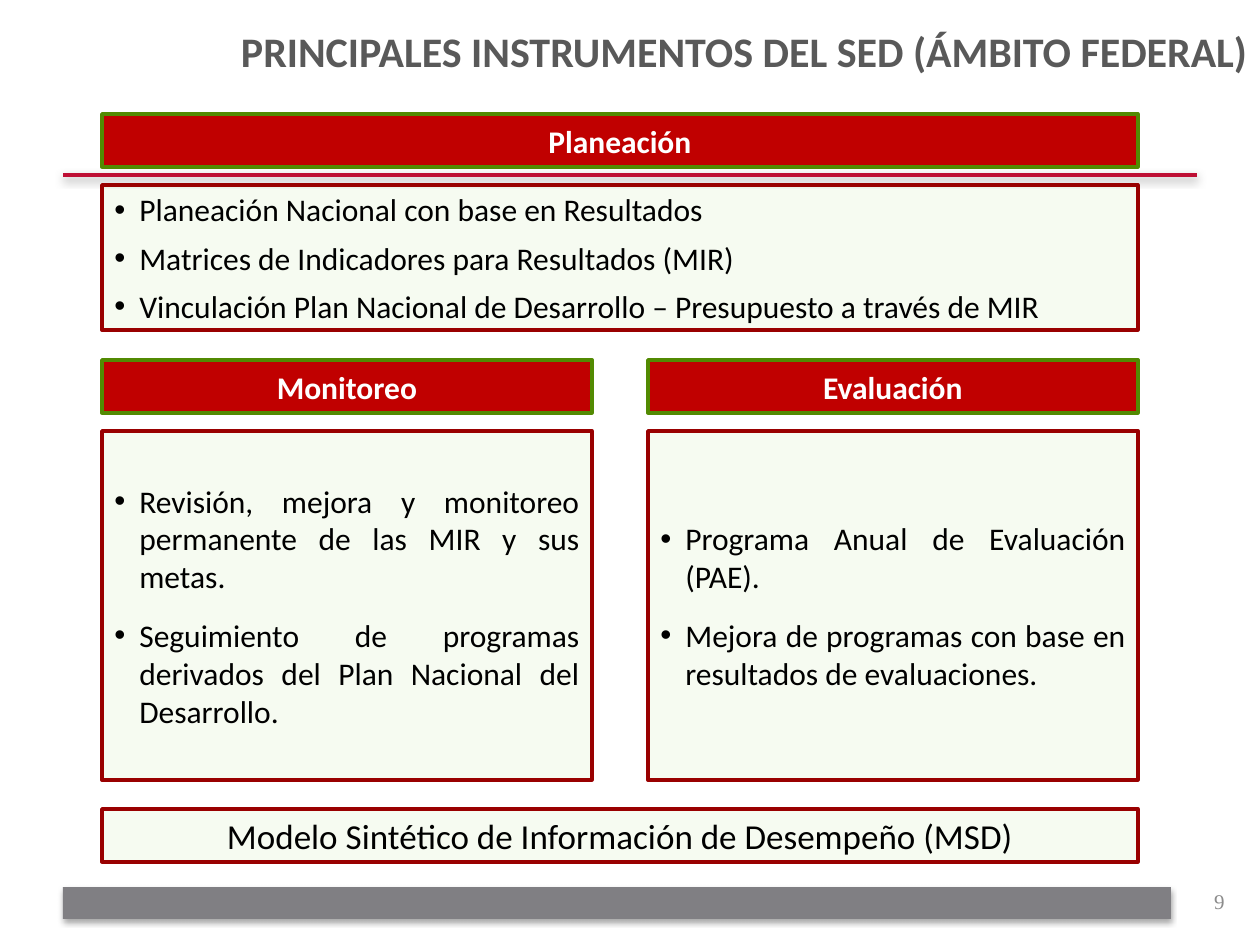
from lxml.etree import SubElement
from pptx import Presentation
from pptx.dml.color import RGBColor
from pptx.enum.shapes import MSO_CONNECTOR as CONN, MSO_SHAPE as SHAPE
from pptx.enum.text import MSO_ANCHOR as ANCHOR, PP_ALIGN as ALIGN
from pptx.oxml.ns import qn
from pptx.util import Pt

EMU = 914400 / 126
WHITE = RGBColor(0xFF, 0xFF, 0xFF)
BLACK = RGBColor(0x00, 0x00, 0x00)
DARK_GRAY = RGBColor(0x59, 0x59, 0x59)
BAR_GRAY = RGBColor(0x80, 0x7F, 0x83)
NUMBER_GRAY = RGBColor(0x8C, 0x8C, 0x8C)
RED = RGBColor(0xC0, 0x00, 0x00)
RULE_RED = RGBColor(0xBE, 0x0F, 0x34)
DARK_RED = RGBColor(0x99, 0x00, 0x00)
GREEN = RGBColor(0x52, 0x8A, 0x02)
LIME = RGBColor(0x92, 0xD0, 0x50)

TITLE = "PRINCIPALES INSTRUMENTOS DEL SED (ÁMBITO FEDERAL)"
MODEL = "Modelo Sintético de Información de Desempeño (MSD)"
PAGE = "9"

LEFT, FULL_W, HALF_W = 102, 1036, 490
RIGHT = LEFT + FULL_W - HALF_W
HEAD_H, HEAD_STEP = 53, 71

# heading, left, top, width, body height, space after, bullets
SECTIONS = [
    ("Monitoreo", LEFT, 360, HALF_W, 349, 12, [
        "Revisión, mejora y monitoreo permanente de las MIR y sus metas.",
        "Seguimiento de programas derivados del Plan Nacional del Desarrollo.",
    ]),
    ("Evaluación", RIGHT, 360, HALF_W, 349, 12, [
        "Programa Anual de Evaluación (PAE).",
        "Mejora de programas con base en resultados de evaluaciones.",
    ]),
    ("Planeación", LEFT, 114, FULL_W, 145, 6, [
        "Planeación Nacional con base en Resultados",
        "Matrices de Indicadores para Resultados (MIR)",
        "Vinculación Plan Nacional de Desarrollo – Presupuesto a través de MIR",
    ]),
]

HEADING = {"size": Pt(18), "bold": True, "name": "Calibri"}
BODY = {"size": Pt(18), "name": "Calibri"}
MODEL_FONT = {"size": Pt(20), "name": "Calibri"}
TITLE_FONT = {"size": Pt(24), "bold": True, "name": "Calibri"}
PAGE_FONT = {"size": Pt(12), "name": "Times New Roman"}


def px(*values):
    """Turn px lengths into EMU."""
    return [round(v * EMU) for v in values]


def add_shadow(s, alpha, blur, dist):
    """Give a shape or connector a black shadow that falls downwards."""
    sp_pr = s._element.spPr
    effects = sp_pr.find(qn("a:effectLst"))
    if effects is None:
        effects = SubElement(sp_pr, qn("a:effectLst"))
    shadow = SubElement(effects, qn("a:outerShdw"), blurRad=str(Pt(blur)),
                        dist=str(Pt(dist)), dir="5400000", rotWithShape="0")
    color = SubElement(shadow, qn("a:srgbClr"), val="000000")
    SubElement(color, qn("a:alpha"), val=str(alpha * 1000))


def add_box(box, fill, line=None, alpha=None):
    """Add a flat rectangle."""
    s = slide.shapes.add_shape(SHAPE.RECTANGLE, *px(*box))
    s.shadow.inherit = False
    s.fill.solid()
    s.fill.fore_color.rgb = fill
    if alpha:
        color = s._element.spPr.find(qn("a:solidFill"))[0]
        SubElement(color, qn("a:alpha"), val=str(alpha * 1000))
    if line is None:
        s.line.fill.background()
    else:
        s.line.color.rgb = line
        s.line.width = Pt(2)
    return s


def write(s, lines, font, color, align, space=None):
    """Write paragraphs, bulleted when a space after is given."""
    tf = s.text_frame
    tf.word_wrap = True
    tf.vertical_anchor = ANCHOR.MIDDLE
    for i, text in enumerate(lines):
        p = tf.add_paragraph() if i else tf.paragraphs[0]
        p.alignment = align
        if space:
            p.space_after = Pt(space)
            p_pr = p._p.get_or_add_pPr()
            p_pr.set("marL", str(px(25)[0]))
            p_pr.set("indent", str(px(-25)[0]))
            SubElement(p_pr, qn("a:buFont"), typeface="Arial")
            SubElement(p_pr, qn("a:buChar"), char="•")
        r = p.add_run()
        r.text = text
        for key, value in font.items():
            setattr(r.font, key, value)
        r.font.color.rgb = color


prs = Presentation()
prs.slide_width, prs.slide_height = px(1260, 945)
slide = prs.slides.add_slide(prs.slide_layouts[6])

add_shadow(add_box((63, 887, 1108, 32), BAR_GRAY), 35, 3.1, 1.8)
rule = slide.shapes.add_connector(CONN.STRAIGHT, *px(63, 175, 1197, 175))
rule.line.color.rgb = RULE_RED
rule.line.width = Pt(2)
add_shadow(rule, 38, 5, 1.6)

for box, text, font, color in [
    ((944, 876, 293, 50), PAGE, PAGE_FONT, NUMBER_GRAY),
    ((0, 4, 1260, 93), TITLE, TITLE_FONT, DARK_GRAY),
]:
    write(slide.shapes.add_textbox(*px(*box)), [text], font, color, ALIGN.RIGHT)

for heading, x, y, w, h, space, bullets in SECTIONS:
    head = add_box((x, y, w, HEAD_H), RED, GREEN)
    write(head, [heading], HEADING, WHITE, ALIGN.CENTER)
    body = add_box((x, y + HEAD_STEP, w, h), LIME, DARK_RED, 8)
    write(body, bullets, BODY, BLACK, ALIGN.JUSTIFY, space)

model = add_box((LEFT, 809, FULL_W, HEAD_H), LIME, DARK_RED, 8)
write(model, [MODEL], MODEL_FONT, BLACK, ALIGN.CENTER)

prs.save("out.pptx")
